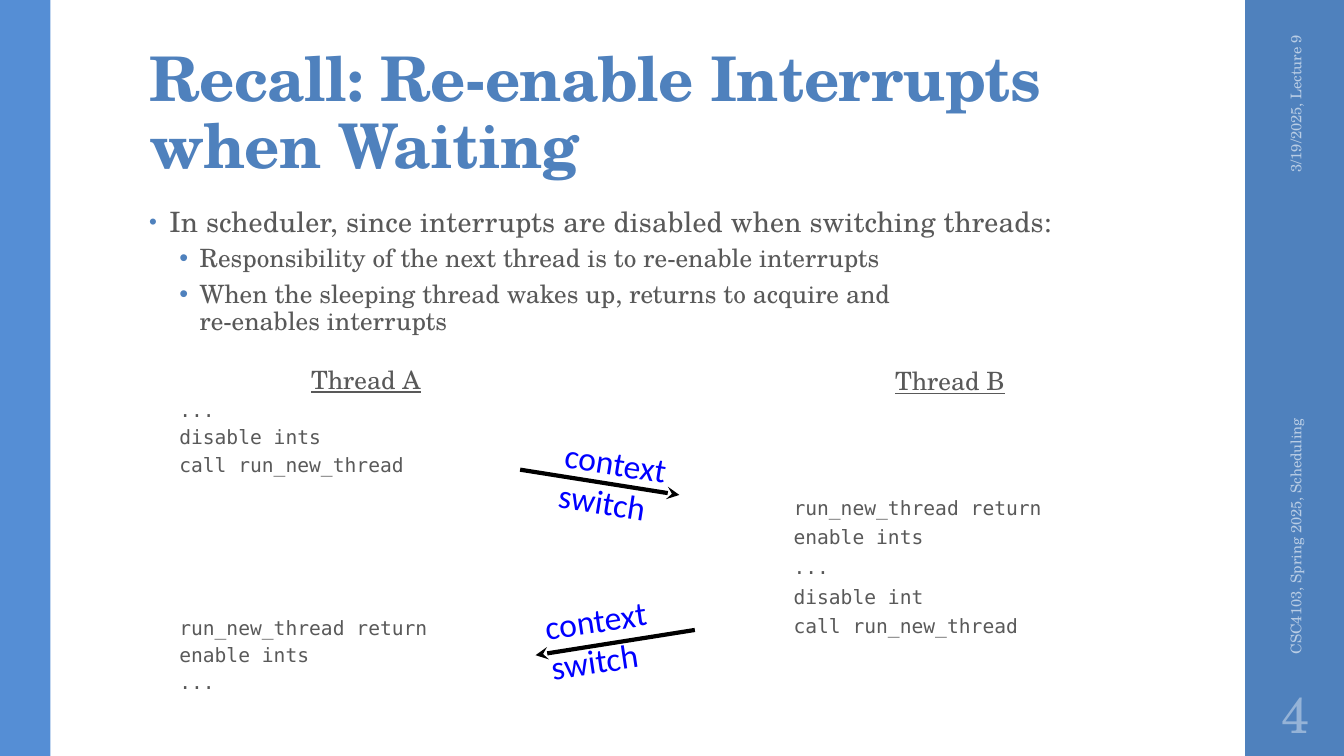
from lxml.etree import SubElement
from pptx import Presentation
from pptx.dml.color import RGBColor
from pptx.enum.shapes import MSO_CONNECTOR, MSO_SHAPE
from pptx.enum.text import MSO_ANCHOR, MSO_AUTO_SIZE, PP_ALIGN
from pptx.oxml.ns import qn
from pptx.util import Inches, Pt

COLORS = {
    "blue": "4F81BD", "sky": "558ED5", "gray": "595959", "pale": "B9CDE5",
    "number": "95B3D7", "switch": "0000FF", "arrow": "000000",
}
SERIF, MONO, SANS = "TeX Gyre Schola", "DejaVu Sans Mono", "Calibri"

TITLE = "Recall: Re-enable Interrupts when Waiting"
POINTS = [
    (0, "In scheduler, since interrupts are disabled when switching threads:"),
    (1, "Responsibility of the next thread is to re-enable interrupts"),
    (1, "When the sleeping thread wakes up, returns to acquire and\vre-enables interrupts"),
]
POINT_STYLES = [
    {"size": 20, "indent": 0.2, "leading": 0.95, "after": 2, "bullet": 80, "tracking": 10},
    {"size": 18, "indent": 0.5, "leading": 0.9, "before": 3, "after": 3, "bullet": 100},
]

# Places are percentages of the slide: left, top, width, height.
BARS = [((92.65, 0, 7.35, 100), "blue"), ((0, 0, 3.75, 100), "sky")]
TITLE_PLACE = (10.35, 4.27, 79.5, 20.4)
POINTS_PLACE = (10.35, 26.67, 70.5, 19.6)
MARGIN_NOTES = [
    ("3/19/2025, Lecture 9", (88.6, 14.53, 15.6, 5.33), 270, PP_ALIGN.RIGHT, 10.5, "pale"),
    ("CSC4103, Spring 2025, Scheduling", (81.7, 59.07, 29.4, 5.33), 270, PP_ALIGN.LEFT, 10.5, "pale"),
    ("4", (92.65, 90, 7.5, 8.67), 0, PP_ALIGN.CENTER, 36, "number"),
]
SWITCHES = [
    ((38.7, 62.13, 50.55, 65.47), (41.05, 57.87, 9.45, 12.13), 9),
    ((51.7, 83.33, 39.85, 86.67), (40, 78.53, 9.45, 12.13), 351.4),
]
THREADS = [
    {"name": "Thread A", "place": (10.35, 48.27, 31.5, 44.27), "leading": 0.8, "indent": 0.3,
     "steps": [(3, ["...", "disable ints", "call run_new_thread"]),
               (100, ["run_new_thread return", "enable ints", "..."])]},
    {"name": "Thread B", "place": (53.8, 48.13, 31.5, 44.27), "leading": 0.9, "indent": 0.6,
     "steps": [(70, ["run_new_thread return", "enable ints", "...", "disable int",
                     "call run_new_thread"])]},
]

deck = Presentation()
deck.slide_width, deck.slide_height = Inches(13.33), Inches(7.5)
slide = deck.slides.add_slide(deck.slide_layouts[1])


def scale(place):
    sides = (deck.slide_width, deck.slide_height) * 2
    return [int(side * share / 100) for side, share in zip(sides, place)]


def move(holder, place):
    holder.left, holder.top, holder.width, holder.height = scale(place)
    holder.text_frame.auto_size = MSO_AUTO_SIZE.NONE
    holder.text_frame.word_wrap = True


def add_text(place, rotation=0):
    holder = slide.shapes.add_textbox(*scale(place))
    holder.rotation = rotation
    holder.text_frame.word_wrap = True
    return holder.text_frame


def style(paragraph, size, color, face=SERIF, align=PP_ALIGN.LEFT, leading=1.0, before=0,
          after=0, indent=0, bullet=None, tracking=0, bold=False, underline=False):
    properties = paragraph._p.get_or_add_pPr()
    properties.set("marL", str(Inches(indent)))
    properties.set("indent", str(Inches(-0.2 if bullet else 0)))
    if bullet:
        tint = SubElement(properties, qn("a:buClr"))
        SubElement(tint, qn("a:srgbClr"), val=COLORS["blue"])
        SubElement(properties, qn("a:buSzPct"), val=str(bullet * 1000))
        SubElement(properties, qn("a:buFont"), typeface="Arial")
        SubElement(properties, qn("a:buChar"), char="•")
    paragraph.alignment = align
    paragraph.line_spacing = leading
    paragraph.space_before, paragraph.space_after = Pt(before), Pt(after)
    for run in paragraph.runs:
        run.font.name, run.font.size = face, Pt(size)
        run.font.bold, run.font.underline = bold, underline
        run.font.color.rgb = RGBColor.from_string(COLORS[color])
        run._r.get_or_add_rPr().set("spc", str(tracking))


for place, color in BARS:
    bar = slide.shapes.add_shape(MSO_SHAPE.RECTANGLE, *scale(place))
    bar.shadow.inherit = False
    bar.fill.solid()
    bar.fill.fore_color.rgb = RGBColor.from_string(COLORS[color])
    bar.line.fill.background()

title = slide.shapes.title
move(title, TITLE_PLACE)
title.text_frame.text = TITLE
title.text_frame.vertical_anchor = MSO_ANCHOR.BOTTOM
title.text_frame.margin_top = Inches(0.03)
style(title.text_frame.paragraphs[0], 44, "blue", leading=0.9, tracking=-50, bold=True)

points = slide.placeholders[1]
move(points, POINTS_PLACE)
points.text_frame.text = "\n".join(text for _, text in POINTS)
for paragraph, (level, _) in zip(points.text_frame.paragraphs, POINTS):
    paragraph.level = level
    style(paragraph, color="gray", **POINT_STYLES[level])

for text, place, rotation, align, size, color in MARGIN_NOTES:
    note = add_text(place, rotation)
    note.text = text
    note.vertical_anchor = MSO_ANCHOR.MIDDLE
    style(note.paragraphs[0], size, color, align=align)

for ends, place, rotation in SWITCHES:
    arrow = slide.shapes.add_connector(MSO_CONNECTOR.STRAIGHT, *scale(ends))
    arrow.line.width = Pt(3)
    arrow.line.color.rgb = RGBColor.from_string(COLORS["arrow"])
    SubElement(arrow.line._get_or_add_ln(), qn("a:tailEnd"), type="stealth")
    SubElement(arrow._element.spPr, qn("a:effectLst"))
    label = add_text(place, rotation)
    label.word_wrap = False
    label.text = "context\vswitch"
    style(label.paragraphs[0], 24, "switch", face=SANS)

for thread in THREADS:
    frame = add_text(thread["place"])
    frame.text = thread["name"]
    style(frame.paragraphs[0], 18, "gray", align=PP_ALIGN.CENTER, leading=thread["leading"],
          after=3, indent=0.3, underline=True)
    for gap, steps in thread["steps"]:
        for index, step in enumerate(steps):
            line = frame.add_paragraph()
            line.text = step
            style(line, 14, "gray", face=MONO, leading=thread["leading"],
                  before=3 if index else gap, after=3, indent=thread["indent"])

deck.save("out.pptx")
